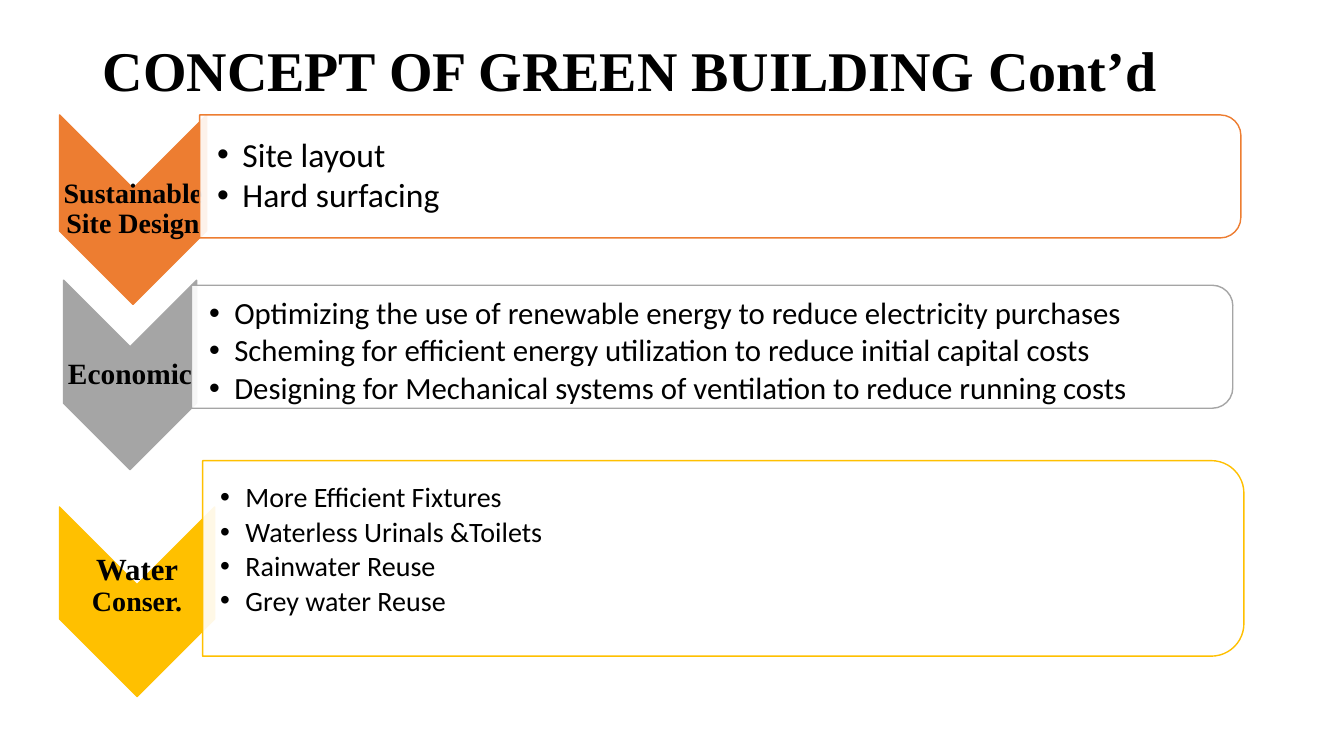
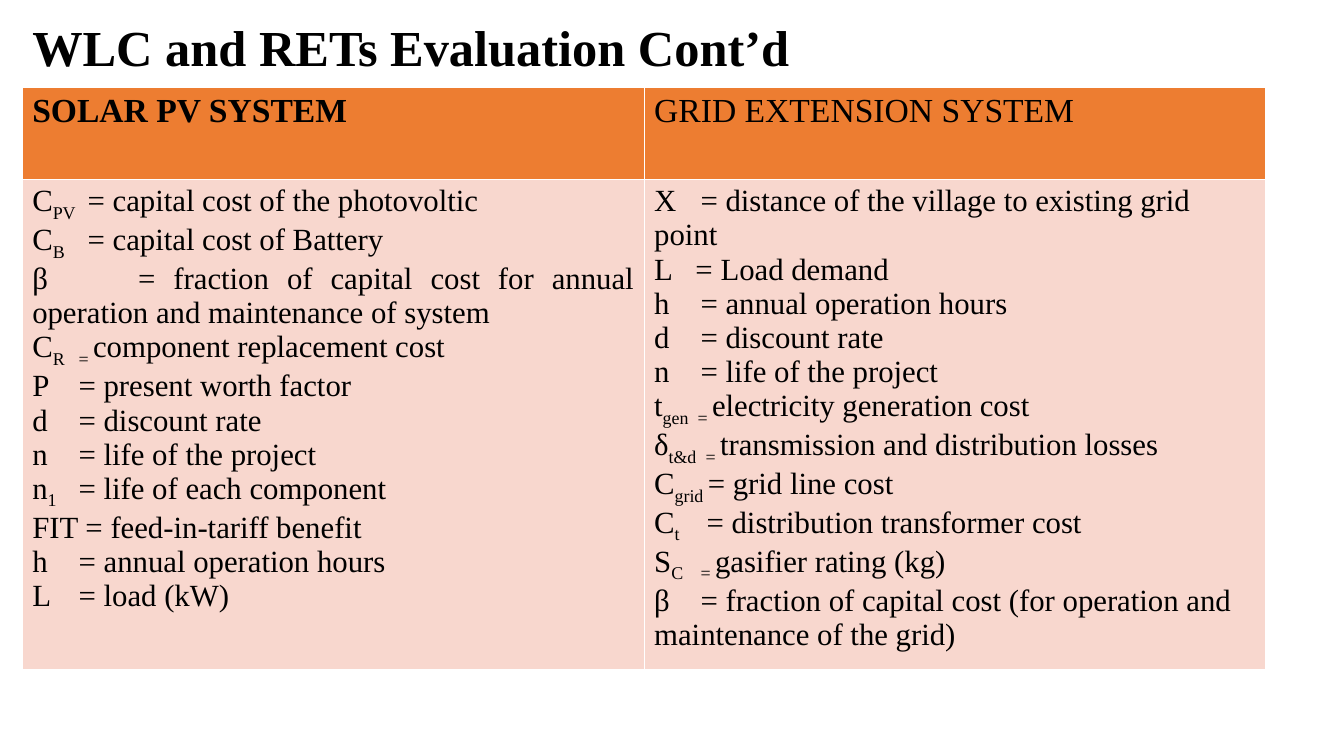
import pptx
import pptx.util
import pptx.dml.color
import pptx.enum.shapes
import pptx.enum.text
import pptx.oxml.ns
import lxml.etree

COLOURS = {"ink": "000000", "paper": "FFFFFF", "orange": "ED7D31",
           "grey": "A5A5A5", "gold": "FFC000", "blush": "F8D7CE"}
SERIF, SANS = "Times New Roman", "Calibri"
CELL = 0.1  # side of one grid square, in inches
TITLE_ONLY = 5
ALIGN = pptx.enum.text.PP_ALIGN
ANCHOR = pptx.enum.text.MSO_ANCHOR
SHAPE = pptx.enum.shapes.MSO_SHAPE


def grid(*squares):
    """Turn columns and rows of the grid into lengths."""
    return [pptx.util.Inches(n * CELL) for n in squares]


def add_xml(parent, tag, **attributes):
    child = lxml.etree.SubElement(parent, pptx.oxml.ns.qn(tag))
    for name, value in attributes.items():
        child.set(name, str(value))
    return child


class Deck:
    def __init__(self):
        self.prs = pptx.Presentation()
        self.prs.slide_width, self.prs.slide_height = grid(133.33, 75)
        self.slide = None

    def colour(self, name):
        return pptx.dml.color.RGBColor.from_string(COLOURS[name])

    def style(self, run, size, face=SERIF, bold=False):
        run.font.size = pptx.util.Pt(size)
        run.font.name = face
        run.font.bold = bold
        run.font.color.rgb = self.colour("ink")

    def titled_slide(self, title, size, left, top, height):
        self.slide = self.prs.slides.add_slide(self.prs.slide_layouts[TITLE_ONLY])
        heading = self.slide.shapes.title
        heading.left, heading.top, heading.width, heading.height = grid(
            left, top, 115, height)
        frame = heading.text_frame
        frame.text = title
        frame.auto_size = pptx.enum.text.MSO_AUTO_SIZE.NONE
        frame.vertical_anchor = ANCHOR.MIDDLE
        line = frame.paragraphs[0]
        line.alignment, line.line_spacing = ALIGN.LEFT, 0.9
        self.style(line.runs[0], size, bold=True)

    def turned_shape(self, kind, left, top, width, height, fill, line, opacity=100):
        """Place a shape turned by 90°; the box given is the one it shows in."""
        shift = (width - height) / 2
        shape = self.slide.shapes.add_shape(
            kind, *grid(left + shift, top - shift, height, width))
        shape.rotation = 90
        shape.shadow.inherit = False
        shape.fill.solid()
        shape.fill.fore_color.rgb = self.colour(fill)
        if opacity < 100:
            tint = shape.fill._xPr.find(".//" + pptx.oxml.ns.qn("a:srgbClr"))
            add_xml(tint, "a:alpha", val=opacity * 1000)
        shape.line.color.rgb = self.colour(line)
        shape.line.width = pptx.util.Pt(1)

    def text_frame(self, left, top, width, height, inset):
        box = self.slide.shapes.add_textbox(*grid(left, top, width, height))
        frame = box.text_frame
        frame.word_wrap = True
        frame.vertical_anchor = ANCHOR.MIDDLE
        frame.margin_left, frame.margin_right = grid(inset, 0.1)
        frame.margin_top = frame.margin_bottom = grid(0.1)[0]
        return frame

    def label(self, left, top, width, height, words):
        line = self.text_frame(left, top, width, height, 0.1).paragraphs[0]
        line.alignment, line.line_spacing = ALIGN.CENTER, 0.9
        for word, size in words:
            run = line.add_run()
            run.text = word
            self.style(run, size, bold=True)

    def bullets(self, left, top, width, height, points, size):
        frame = self.text_frame(left, top, width, height, 1.75)
        frame.text = "\n".join(points)
        hang = pptx.util.Inches(0.25)
        for line in frame.paragraphs:
            line.line_spacing = 0.9
            line.space_after = pptx.util.Pt(3)
            props = line._p.get_or_add_pPr()
            props.set("marL", str(hang))
            props.set("indent", str(-hang))
            add_xml(props, "a:buFont", typeface="Arial")
            add_xml(props, "a:buChar", char="•")
            self.style(line.runs[0], size, SANS)

    def table(self, left, top, widths, heights):
        table = self.slide.shapes.add_table(
            len(heights), len(widths),
            *grid(left, top, sum(widths), sum(heights))).table
        table.horz_banding = False
        for column, width in zip(table.columns, grid(*widths)):
            column.width = width
        for row, height in zip(table.rows, grid(*heights)):
            row.height = height
        return table

    def fill_cell(self, cell, fill):
        cell.fill.solid()
        cell.fill.fore_color.rgb = self.colour(fill)

    def header_cell(self, cell, heading, bold):
        self.fill_cell(cell, "orange")
        cell.text_frame.text = heading
        self.style(cell.text_frame.paragraphs[0].runs[0], 24, bold=bold)

    def symbol_cell(self, cell, entries, alignment):
        """Write one symbol a line; text between underscores is subscript."""
        self.fill_cell(cell, "blush")
        frame = cell.text_frame
        for index, (entry, stop) in enumerate(entries):
            line = frame.add_paragraph() if index else frame.paragraphs[0]
            line.alignment = alignment
            stops = add_xml(line._p.get_or_add_pPr(), "a:tabLst")
            add_xml(stops, "a:tab", pos=grid(stop)[0], algn="l")
            for part, words in enumerate(entry.split("_")):
                run = line.add_run()
                run.text = words
                self.style(run, 22)
                if part % 2:
                    run.font._element.set("baseline", "-25000")


# Content: chevron and panel are left, top, width, height in grid squares;
# the two drops move label and points away from the middle of their shape
CONCEPTS = [
    dict(colour="orange", chevron=(5.9, 11.4, 14.6, 18.8), label_drop=0,
         label=[("Sustainable Site Design", 20)],
         panel=(19.8, 11.4, 103.3, 12.2), points_drop=0, size=24,
         points=["Site layout", "Hard surfacing"]),
    dict(colour="grey", chevron=(6.3, 27.8, 13.2, 18.8), label_drop=0,
         label=[("Economic", 21)],
         panel=(19, 28.3, 103.3, 12.2), points_drop=0.5, size=22,
         points=["Optimizing the use of renewable energy to reduce electricity purchases",
                 "Scheming for efficient energy utilization to reduce initial capital costs",
                 "Designing for Mechanical systems of ventilation to reduce running costs"]),
    dict(colour="gold", chevron=(5.9, 50.3, 15.4, 18.8), label_drop=-1.6,
         label=[("Water", 22), (" Conser.", 20)],
         panel=(20.1, 45.7, 103.3, 19.4), points_drop=-0.8, size=20,
         points=["More Efficient Fixtures", "Waterless Urinals &Toilets",
                 "Rainwater Reuse", "Grey water Reuse"]),
]

# Each symbol with the tab stop of its meaning
STOP = 4.6
SOLAR_SYMBOLS = [
    ("C_PV_\t= capital cost of the photovoltic", 5.5),
    ("C_B_\t= capital cost of Battery", 5.5),
    ("β\t= fraction of capital cost for annual operation and maintenance of system", 10.5),
    ("C_R\t= _component replacement cost", STOP),
    ("P\t= present worth factor", STOP),
    ("d\t= discount rate", STOP),
    ("n\t= life of the project", STOP),
    ("n_1_\t= life of each component", STOP),
    ("FIT = feed-in-tariff benefit", STOP),
    ("h\t= annual operation hours", STOP),
    ("L\t= load (kW)", STOP),
]
GRID_SYMBOLS = [
    ("X\t= distance of the village to existing grid point", STOP),
    ("L\t= Load demand", 4.1),
    ("h\t= annual operation hours", STOP),
    ("d\t= discount rate", STOP),
    ("n\t= life of the project", STOP),
    ("t_gen\t= _electricity generation cost", 4.3),
    ("δ_t&d\t= _transmission and distribution losses", 5.1),
    ("C_grid _= grid line cost", STOP),
    ("C_t_\t= distribution transformer cost", 5.2),
    ("S_C\t= _gasifier rating (kg)", STOP),
    ("β\t= fraction of capital cost (for operation and maintenance of the grid)", STOP),
]


def main():
    deck = Deck()

    # Green building concepts
    deck.titled_slide("CONCEPT OF GREEN BUILDING Cont’d", 40, 9.2, 4, 6.6)
    for concept in CONCEPTS:
        colour = concept["colour"]
        deck.turned_shape(SHAPE.CHEVRON, *concept["chevron"], colour, colour)
        left, top, width, height = concept["chevron"]
        deck.label(left, top + concept["label_drop"], width, height, concept["label"])
        deck.turned_shape(SHAPE.ROUND_2_SAME_RECTANGLE, *concept["panel"],
                          "paper", colour, opacity=90)
        left, top, width, height = concept["panel"]
        deck.bullets(left, top + concept["points_drop"], width, height,
                     concept["points"], concept["size"])

    # Symbols of the two energy systems
    deck.titled_slide("WLC and RETs Evaluation Cont’d", 36, 2.2, 1.3, 7.4)
    symbols = deck.table(2.2, 8.7, [61.7, 61.7], [9.1, 48.6])
    deck.header_cell(symbols.cell(0, 0), "SOLAR PV SYSTEM", True)
    deck.header_cell(symbols.cell(0, 1), "GRID EXTENSION SYSTEM", False)
    deck.symbol_cell(symbols.cell(1, 0), SOLAR_SYMBOLS, ALIGN.JUSTIFY)
    deck.symbol_cell(symbols.cell(1, 1), GRID_SYMBOLS, ALIGN.LEFT)

    deck.prs.save("out.pptx")


if __name__ == "__main__":
    main()
